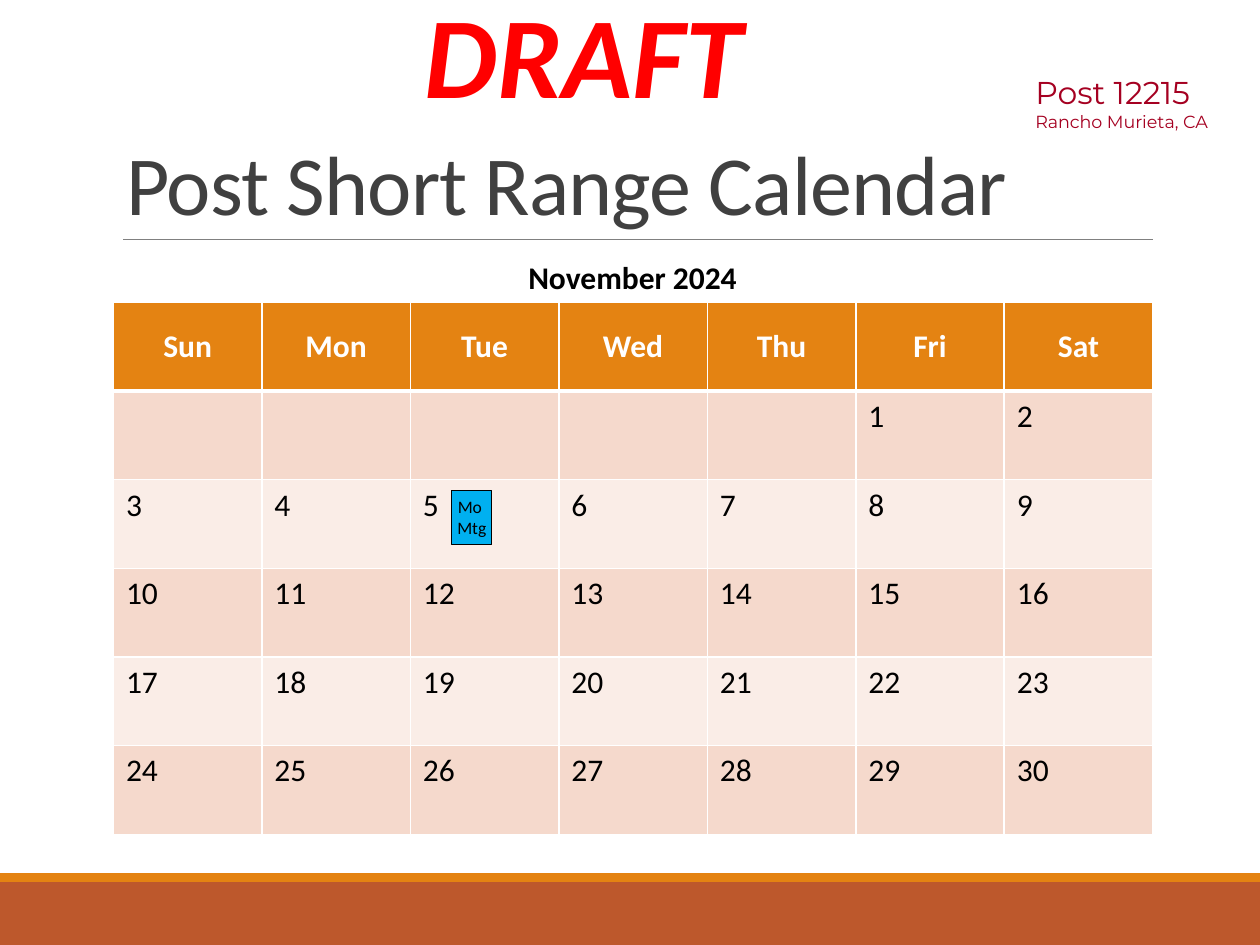
from lxml import etree
from pptx import Presentation
from pptx.dml.color import RGBColor
from pptx.enum.shapes import MSO_CONNECTOR, MSO_SHAPE
from pptx.enum.text import MSO_ANCHOR, MSO_AUTO_SIZE, PP_ALIGN
from pptx.oxml.ns import qn
from pptx.util import Pt

RECTANGLE = MSO_SHAPE.RECTANGLE
STRAIGHT = MSO_CONNECTOR.STRAIGHT
LEFT, CENTER = PP_ALIGN.LEFT, PP_ALIGN.CENTER
TOP, MIDDLE, BOTTOM = MSO_ANCHOR.TOP, MSO_ANCHOR.MIDDLE, MSO_ANCHOR.BOTTOM
GROW, FIXED = MSO_AUTO_SIZE.SHAPE_TO_FIT_TEXT, MSO_AUTO_SIZE.NONE

COLORS = {
    "rust": "BD582C", "orange": "E48312", "gray": "808080", "crimson": "A50021",
    "red": "FF0000", "charcoal": "404040", "black": "000000", "white": "FFFFFF",
    "peach": "F5D9CC", "pale": "FAEDE7", "blue": "00B0F0",
}
DAYS = ["Sun", "Mon", "Tue", "Wed", "Thu", "Fri", "Sat"]
FIRST_WEEKDAY = DAYS.index("Fri")
DAY_COUNT = 30
WEEK_COUNT = 5


def color(name):
    return RGBColor.from_string(COLORS[name])


def add_solid_line(parent, tag, width, color_name):
    line = etree.SubElement(parent, qn(tag), w=str(Pt(width)))
    fill = etree.SubElement(line, qn("a:solidFill"))
    etree.SubElement(fill, qn("a:srgbClr"), val=COLORS[color_name])
    return line


def write_text(paragraph, text, size=18, color_name="black", font="Calibri",
               bold=False, italic=False, align=LEFT, line_spacing=None,
               tracking=None, outline=None):
    """Add one run; tracking is in hundredths of a point, outline is (width, color)."""
    paragraph.alignment = align
    if line_spacing:
        paragraph.line_spacing = line_spacing
    run = paragraph.add_run()
    run.text = text
    run.font.size = Pt(size)
    run.font.name = font
    run.font.bold = bold
    run.font.italic = italic
    run.font.color.rgb = color(color_name)
    properties = run.font._element
    if tracking:
        properties.set("spc", str(tracking))
    if outline:
        properties.insert(0, add_solid_line(properties, "a:ln", *outline))


class CalendarSlide:
    """Holds the current slide and draws each kind of element, in points."""

    def __init__(self, slide):
        self.shapes = slide.shapes

    def fill_frame(self, frame, lines, anchor, wrap, auto_size):
        frame.word_wrap = wrap
        frame.auto_size = auto_size
        frame.vertical_anchor = anchor
        for index, (text, style) in enumerate(lines):
            paragraph = frame.add_paragraph() if index else frame.paragraphs[0]
            write_text(paragraph, text, **style)

    def text(self, box, lines, anchor=TOP, wrap=False, auto_size=GROW):
        shape = self.shapes.add_textbox(*map(Pt, box))
        self.fill_frame(shape.text_frame, lines, anchor, wrap, auto_size)

    def rectangle(self, box, fill, line=None, lines=()):
        shape = self.shapes.add_shape(RECTANGLE, *map(Pt, box))
        shape.shadow.inherit = False
        shape.fill.solid()
        shape.fill.fore_color.rgb = color(fill)
        if line:
            shape.line.color.rgb = color(line)
            shape.line.width = Pt(0.75)
        else:
            shape.line.fill.background()
        if lines:
            self.fill_frame(shape.text_frame, lines, MIDDLE, False, FIXED)

    def rule(self, left, right, y):
        connector = self.shapes.add_connector(
            STRAIGHT, Pt(left), Pt(y), Pt(right), Pt(y))
        connector.line.color.rgb = color("gray")
        connector.line.width = Pt(0.5)
        etree.SubElement(connector._element.spPr, qn("a:effectLst"))

    def cell(self, cell, text, fill, header):
        borders = {"L": 1, "R": 1, "T": 1, "B": 3 if header else 1}
        properties = cell._tc.get_or_add_tcPr()
        for side, width in borders.items():
            add_solid_line(properties, f"a:ln{side}", width, "white")
        cell.fill.solid()
        cell.fill.fore_color.rgb = color(fill)
        cell.vertical_anchor = MIDDLE if header else TOP
        if text:
            write_text(cell.text_frame.paragraphs[0], text, bold=header,
                       color_name="white" if header else "black",
                       align=CENTER if header else LEFT)

    def calendar(self, box):
        table = self.shapes.add_table(
            WEEK_COUNT + 1, len(DAYS), *map(Pt, box)).table
        for column in table.columns:
            column.width = Pt(box[2] / len(DAYS))
        for row in table.rows:
            row.height = Pt(box[3] / (WEEK_COUNT + 1))
        for column, name in enumerate(DAYS):
            self.cell(table.cell(0, column), name, "orange", True)
            for week in range(WEEK_COUNT):
                day = week * len(DAYS) + column - FIRST_WEEKDAY + 1
                text = str(day) if 1 <= day <= DAY_COUNT else ""
                fill = "pale" if week % 2 else "peach"
                self.cell(table.cell(week + 1, column), text, fill, False)


def main():
    presentation = Presentation()
    presentation.slide_width, presentation.slide_height = Pt(720), Pt(540)
    page = CalendarSlide(presentation.slides.add_slide(presentation.slide_layouts[6]))

    page.rectangle((0, 504, 720, 36), "rust")
    page.rectangle((0, 499, 720, 5), "orange")
    page.rule(70.5, 659, 136.8)

    post_style = {"font": "Montserrat", "color_name": "crimson"}
    page.text((584.6, 38.2, 125.3, 41), [
        ("Post 12215", post_style),
        ("Rancho Murieta, CA", {**post_style, "size": 10}),
    ])
    page.text((234.7, -13.5, 198, 87.1), [
        ("DRAFT", {"size": 66, "color_name": "red", "bold": True, "italic": True,
                   "align": CENTER, "outline": (0.52, "rust")}),
    ])
    page.text((65, 22, 594, 114.5), [
        ("Post Short Range Calendar", {"size": 48, "color_name": "charcoal",
                                       "line_spacing": 0.85, "tracking": -50}),
    ], anchor=BOTTOM, wrap=True, auto_size=FIXED)

    page.calendar((64.8, 172.8, 594, 304))
    page.text((293.5, 144, 136, 29),
              [("November 2024", {"bold": True, "align": CENTER})])
    meeting_style = {"size": 10, "align": CENTER}
    page.rectangle((258.1, 280.2, 23, 31), "blue", "black",
                   [("Mo ", meeting_style), ("Mtg", meeting_style)])

    presentation.save("out.pptx")


if __name__ == "__main__":
    main()
